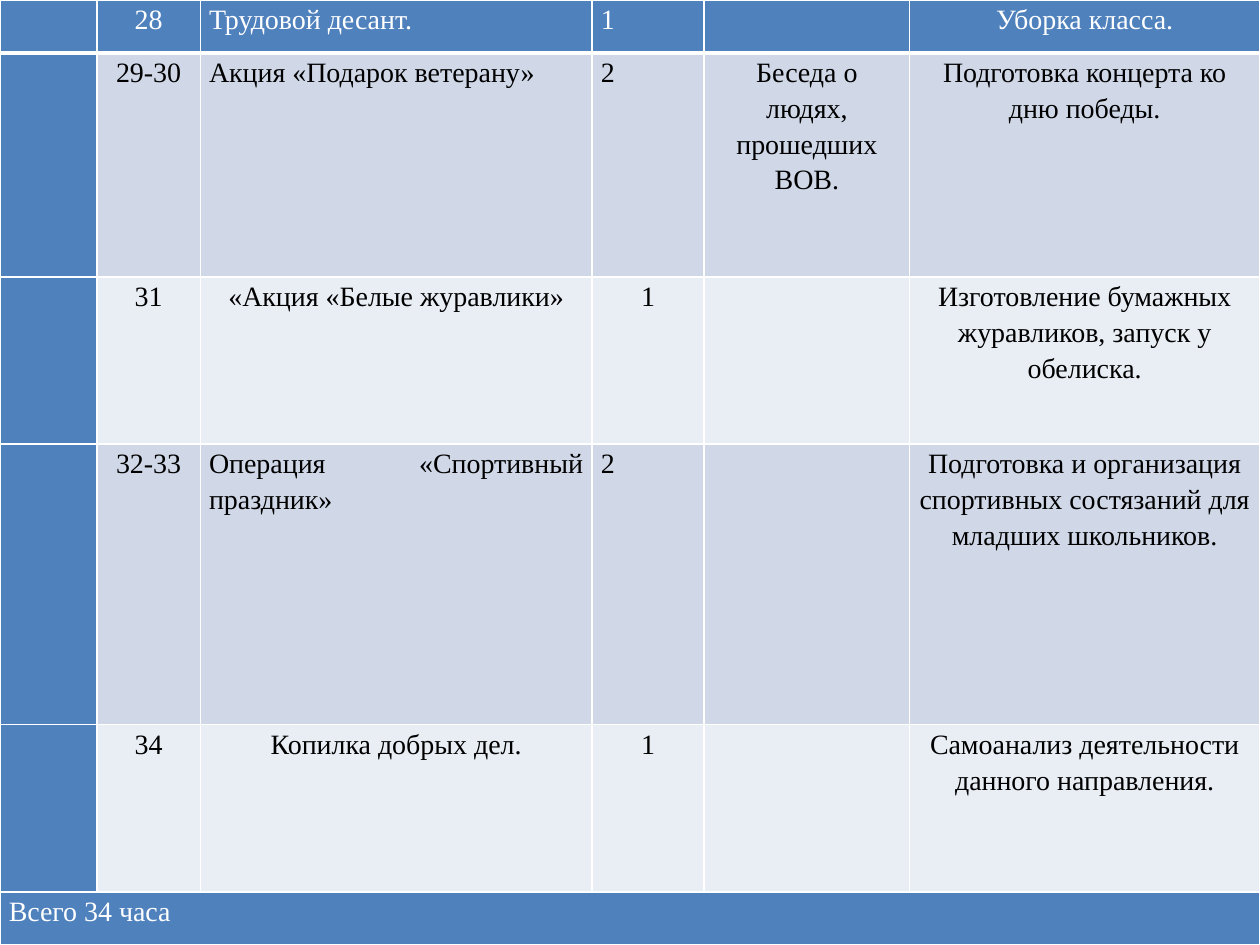
import pptx
import pptx.util
import pptx.dml.color
import pptx.enum.text
import pptx.oxml
import pptx.oxml.ns
from dataclasses import dataclass

Inches, Pt = pptx.util.Inches, pptx.util.Pt
Align = pptx.enum.text.PP_ALIGN


@dataclass(frozen=True)
class Theme:
    accent: str = "4F81BD"
    bands: tuple = ("E9EDF4", "D0D8E8")
    light: str = "FFFFFF"
    dark: str = "000000"
    font: str = "Times New Roman"
    size: int = 16
    rule: float = 1
    thick: float = 3


THEME = Theme()
COLS = (0.77, 0.82, 3.11, 0.89, 1.63, 2.78)
ROWS = (0.42, 1.78, 1.33, 2.23, 1.33, 0.42)
LAST = len(ROWS) - 1
PLAN = (
    ("", "28", "Трудовой десант.", "1", "", "Уборка класса."),
    ("", "29-30", "Акция «Подарок ветерану»", "2",
     "Беседа о людях, прошедших ВОВ.", "Подготовка концерта ко дню победы."),
    ("", "31", "«Акция «Белые журавлики»", "1", "",
     "Изготовление бумажных журавликов, запуск у обелиска."),
    ("", "32-33", "Операция «Спортивный праздник» ", "2", "",
     "Подготовка и организация спортивных состязаний для младших школьников."),
    ("", "34", "Копилка добрых дел.", "1", "",
     "Самоанализ деятельности данного направления."),
    ("Всего 34 часа", "", "", "", "", ""),
)


def color(code):
    return pptx.dml.color.RGBColor.from_string(code)


def border(cell, base):
    props = cell._tc.get_or_add_tcPr()
    for spot, side in enumerate("LRTB"):
        width = Pt(base if side == "B" else THEME.rule)
        props.insert(spot, pptx.oxml.parse_xml(
            f'<a:ln{side} {pptx.oxml.ns.nsdecls("a")} w="{width}"><a:solidFill>'
            f'<a:srgbClr val="{THEME.light}"/></a:solidFill></a:ln{side}>'))


def align(row, col):
    """Topic and hours are justified in the head and in the darker bands."""
    if row == LAST:
        return Align.LEFT
    if col in (2, 3) and (row == 0 or row % 2):
        return Align.JUSTIFY
    return Align.CENTER


def write(cell, text, ink, side):
    cell.margin_left = cell.margin_right = Inches(0.07)
    cell.margin_top = cell.margin_bottom = 0
    para = cell.text_frame.paragraphs[0]
    para.text = text
    para.alignment = side
    para.line_spacing = 1.15
    para.font.name = THEME.font
    para.font.size = Pt(THEME.size)
    para.font.color.rgb = color(ink)


def plan_table(slide, left, top, width, height):
    table = slide.shapes.add_table(
        len(ROWS), len(COLS), left, top, width, height).table
    for col, share in zip(table.columns, COLS):
        col.width = int(width * share / sum(COLS))
    for row, share in zip(table.rows, ROWS):
        row.height = int(height * share / sum(ROWS))
    table.cell(LAST, 0).merge(table.cell(LAST, len(COLS) - 1))
    for r, line in enumerate(PLAN):
        for c, text in enumerate(line):
            cell = table.cell(r, c)
            strong = r in (0, LAST) or c == 0
            cell.fill.solid()
            cell.fill.fore_color.rgb = color(
                THEME.accent if strong else THEME.bands[r % 2])
            border(cell, THEME.rule if r else THEME.thick)
            if text:
                write(cell, text, THEME.light if strong else THEME.dark,
                      align(r, c))


def main():
    deck = pptx.Presentation()
    deck.slide_width, deck.slide_height = Inches(10), Inches(7.5)
    slide = deck.slides.add_slide(deck.slide_layouts.get_by_name("Blank"))
    plan_table(slide, 0, 0, deck.slide_width, deck.slide_height)
    deck.save("out.pptx")


if __name__ == "__main__":
    main()
